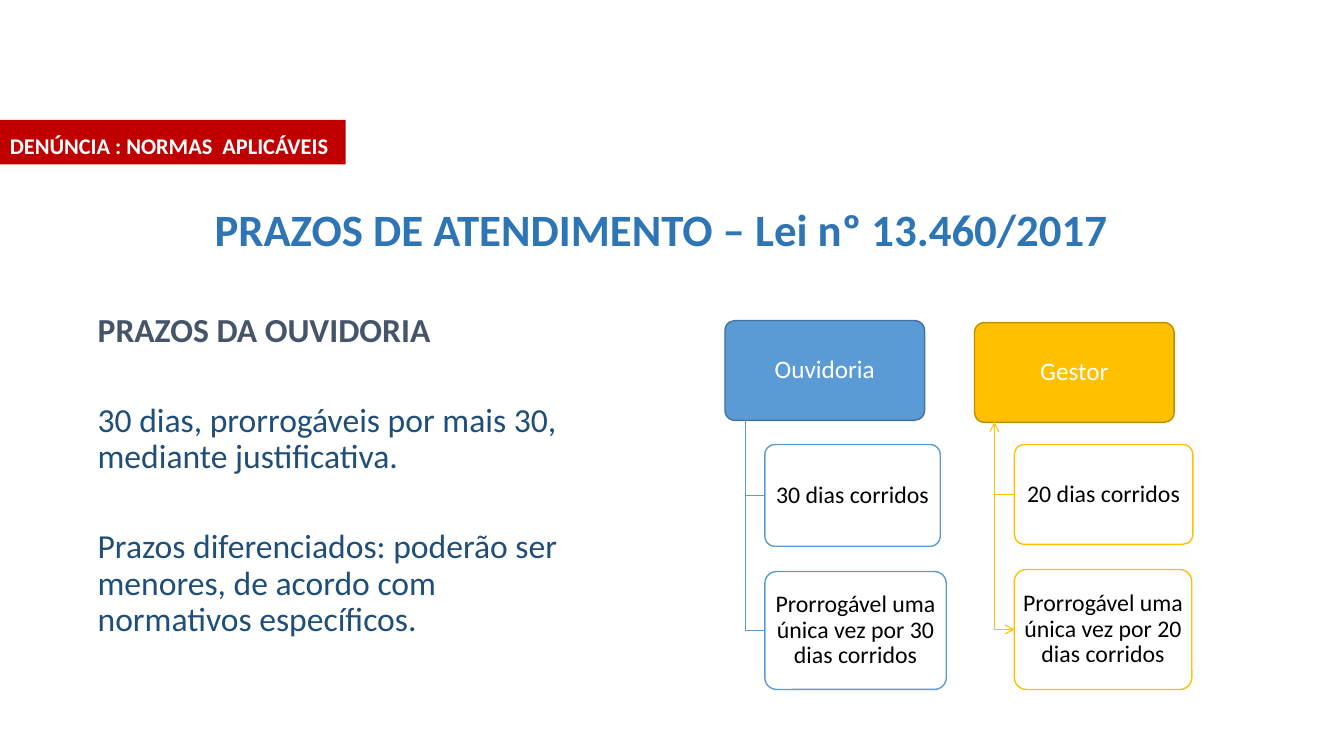
from lxml import etree
from pptx import Presentation
from pptx.dml.color import RGBColor
from pptx.enum.shapes import MSO_SHAPE
from pptx.enum.text import MSO_ANCHOR, PP_ALIGN
from pptx.oxml.ns import qn
from pptx.util import Inches, Pt

SLIDE_WIDTH, SLIDE_HEIGHT = 13.33, 7.5
FONT = "Calibri"

TAG = "DENÚNCIA : NORMAS  APLICÁVEIS"
TITLE = "PRAZOS DE ATENDIMENTO – Lei nº 13.460/2017"
# text, colour, bold, space before in points
DEADLINES = [
    ("PRAZOS DA OUVIDORIA", "44546A", True, 0),
    ("30 dias, prorrogáveis por mais 30, mediante justificativa.", "1F4E79", False, 38.4),
    ("Prazos diferenciados: poderão ser menores, de acordo com normativos específicos.",
     "1F4E79", False, 38.4),
]
# Steps: text, top, width, height, link weight, link with arrows
BRANCHES = [
    {"name": "Ouvidoria", "top": 3.18, "fill": "5B9BD5", "line": "43739E", "steps": [
        ("30 dias corridos", 4.41, 1.74, 1.01, 0.5, False),
        ("Prorrogável uma única vez por 30 dias corridos", 5.67, 1.8, 1.17, 0.5, False)]},
    {"name": "Gestor", "top": 3.2, "fill": "FFC000", "line": "BD8E00", "steps": [
        ("20 dias corridos", 4.41, 1.77, 0.99, 0.5, False),
        ("Prorrogável uma única vez por 20 dias corridos", 5.65, 1.76, 1.19, 0.75, True)]},
]
BRANCH_LEFT = 7.19
HEAD_WIDTH = 1.98
HEAD_HEIGHT = HEAD_WIDTH / 2
BRANCH_PITCH = HEAD_WIDTH * 1.25
INDENT = HEAD_WIDTH / 10


def color(value):
    return RGBColor.from_string(value)


def format_paragraph(paragraph, size, font_color, bold=False, align=None, spacing=None):
    paragraph.alignment = align
    paragraph.line_spacing = spacing
    font = paragraph.font
    for run in paragraph.runs:
        font = run.font
        font.name, font.size, font.bold = FONT, Pt(size), bold
        font.color.rgb = color(font_color)


def set_frame(frame, anchor, horizontal, vertical):
    frame.word_wrap = True
    frame.vertical_anchor = anchor
    frame.margin_left = frame.margin_right = Inches(horizontal)
    frame.margin_top = frame.margin_bottom = Inches(vertical)


def add_box(slide, kind, left, top, width, height, fill, line=None):
    shape = slide.shapes.add_shape(
        kind, Inches(left), Inches(top), Inches(width), Inches(height))
    shape.shadow.inherit = False
    shape.fill.solid()
    shape.fill.fore_color.rgb = color(fill)
    if line:
        shape.line.color.rgb = color(line)
        shape.line.width = Pt(1)
    else:
        shape.line.fill.background()
    return shape


def add_card(slide, text, left, top, width, height, fill, line, size, font_color, inset):
    card = add_box(slide, MSO_SHAPE.ROUNDED_RECTANGLE, left, top, width, height, fill, line)
    card.adjustments[0] = 0.1
    set_frame(card.text_frame, MSO_ANCHOR.MIDDLE, 0.04, inset)
    card.text_frame.text = text
    format_paragraph(card.text_frame.paragraphs[0], size, font_color,
                     align=PP_ALIGN.CENTER, spacing=0.9)


def add_link(slide, left, top, bottom, line, weight, arrows):
    """Draw an L-shaped link from a head's lower edge to a step's left side."""
    builder = slide.shapes.build_freeform(Inches(left), Inches(top))
    builder.add_line_segments(
        [(Inches(left), Inches(bottom)), (Inches(left + INDENT), Inches(bottom))], close=False)
    link = builder.convert_to_shape()
    link.shadow.inherit = False
    link.fill.background()
    link.line.color.rgb = color(line)
    link.line.width = Pt(weight)
    if arrows:
        outline = link.line._get_or_add_ln()
        for end in ("a:headEnd", "a:tailEnd"):
            etree.SubElement(outline, qn(end), type="arrow")


def add_branch(slide, branch, left):
    top, accent = branch["top"], branch["fill"]
    add_card(slide, branch["name"], left, top, HEAD_WIDTH, HEAD_HEIGHT,
             accent, branch["line"], 18, "FFFFFF", 0.03)
    for text, step_top, width, height, weight, arrows in branch["steps"]:
        add_link(slide, left + INDENT, top + HEAD_HEIGHT, step_top + height / 2,
                 accent, weight, arrows)
        add_card(slide, text, left + 2 * INDENT, step_top, width, height,
                 "FFFFFF", accent, 17, "000000", 0.02)


def add_text_box(slide, left, top, width, height, horizontal, vertical):
    box = slide.shapes.add_textbox(Inches(left), Inches(top), Inches(width), Inches(height))
    set_frame(box.text_frame, MSO_ANCHOR.TOP, horizontal, vertical)
    return box.text_frame


def main():
    presentation = Presentation()
    presentation.slide_width = Inches(SLIDE_WIDTH)
    presentation.slide_height = Inches(SLIDE_HEIGHT)
    slide = presentation.slides.add_slide(presentation.slide_layouts[6])

    for index, branch in enumerate(BRANCHES):
        add_branch(slide, branch, BRANCH_LEFT + index * BRANCH_PITCH)

    title = add_text_box(slide, 1.97, 1.69, 9.18, 0.83, 0.1, 0.05)
    title.text = TITLE
    format_paragraph(title.paragraphs[0], 32, "2E75B6", True, PP_ALIGN.CENTER, 1.5)

    tag = add_box(slide, MSO_SHAPE.RECTANGLE, 0, 1.19, 3.43, 0.44, "C00000").text_frame
    set_frame(tag, MSO_ANCHOR.BOTTOM, 0.1, 0.05)
    tag.text = TAG
    format_paragraph(tag.paragraphs[0], 16, "FFFFFF", True, PP_ALIGN.LEFT)

    deadlines = add_text_box(slide, 0.87, 3.01, 4.88, 4.01, 0.1, 0.1)
    deadlines.text = "\n".join(text for text, *_ in DEADLINES)
    for paragraph, (_, font_color, bold, gap) in zip(deadlines.paragraphs, DEADLINES):
        format_paragraph(paragraph, 24, font_color, bold, PP_ALIGN.LEFT, 0.9)
        if gap:
            paragraph.space_before = Pt(gap)

    presentation.save("out.pptx")


if __name__ == "__main__":
    main()
